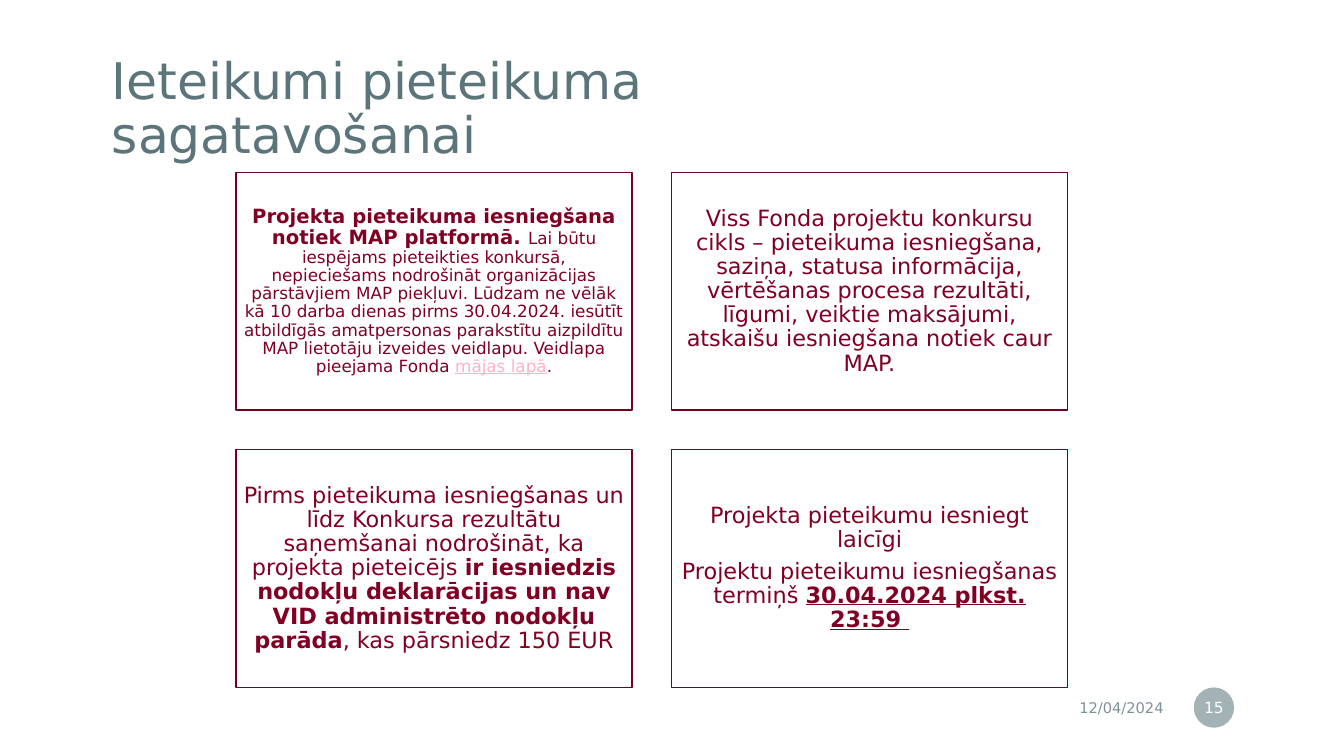
from dataclasses import dataclass

from lxml.etree import SubElement
from pptx import Presentation
from pptx.dml.color import RGBColor
from pptx.enum.shapes import MSO_SHAPE
from pptx.enum.text import MSO_ANCHOR, MSO_AUTO_SIZE, PP_ALIGN
from pptx.oxml.ns import qn
from pptx.util import Inches, Pt


@dataclass(frozen=True)
class Theme:
    font: str = "DejaVu Sans"
    title: str = "5B757A"
    muted: str = "7C9396"
    white: str = "FFFFFF"
    border: str = "740021"
    text: str = "800024"
    link: str = "FFB2C8"
    title_size: float = 36
    body_size: float = 16
    lead_size: float = 14
    detail_size: float = 12
    number_size: float = 11
    date_size: float = 10.5


THEME = Theme()
BODY = {"size": THEME.body_size, "color": THEME.text}
BOLD = {**BODY, "bold": True}
DETAIL = {**BODY, "size": THEME.detail_size}

CARD_LEFT, CARD_TOP = 2.34, 1.71
CARD_WIDTH, CARD_HEIGHT, CARD_GAP = 3.93, 2.36, 0.39

# Each card is a list of paragraphs, each paragraph a list of (text, format) runs.
CARDS = [
    [[
        ("Projekta pieteikuma iesniegšana notiek MAP platformā. ",
         {**BOLD, "size": THEME.lead_size}),
        ("Lai būtu iespējams pieteikties konkursā, nepieciešams nodrošināt "
         "organizācijas pārstāvjiem MAP piekļuvi. Lūdzam ne vēlāk kā 10 darba "
         "dienas pirms 30.04.2024. iesūtīt atbildīgās amatpersonas parakstītu "
         "aizpildītu MAP lietotāju izveides veidlapu. Veidlapa pieejama Fonda ",
         DETAIL),
        ("mājas lapā", {**DETAIL, "color": THEME.link, "underline": True}),
        (".", DETAIL),
    ]],
    [[
        ("Viss Fonda projektu konkursu cikls – pieteikuma iesniegšana, saziņa, "
         "statusa informācija, vērtēšanas procesa rezultāti, līgumi, veiktie "
         "maksājumi, atskaišu iesniegšana notiek caur MAP.", BODY),
    ]],
    [[
        ("Pirms pieteikuma iesniegšanas un līdz Konkursa rezultātu saņemšanai "
         "nodrošināt, ka projekta pieteicējs ", BODY),
        ("ir iesniedzis nodokļu deklarācijas un nav VID administrēto nodokļu "
         "parāda", BOLD),
        (", kas pārsniedz 150 EUR", BODY),
    ]],
    [
        [("Projekta pieteikumu iesniegt laicīgi", BODY)],
        [("Projektu pieteikumu iesniegšanas termiņš ", BODY),
         ("30.04.2024 plkst. 23:59 ", {**BOLD, "underline": True})],
    ],
]


def set_attributes(target, values):
    for name, value in values.items():
        setattr(target, name, value)


def write_text(shape, paragraphs, margins, paragraph_format):
    """Fill a shape with formatted runs; margins are horizontal, vertical inches."""
    horizontal, vertical = (Inches(margin) for margin in margins)
    frame = shape.text_frame
    set_attributes(frame, {
        "word_wrap": True,
        "auto_size": MSO_AUTO_SIZE.NONE,
        "vertical_anchor": MSO_ANCHOR.MIDDLE,
        "margin_left": horizontal, "margin_right": horizontal,
        "margin_top": vertical, "margin_bottom": vertical,
    })
    for index, runs in enumerate(paragraphs):
        paragraph = frame.add_paragraph() if index else frame.paragraphs[0]
        set_attributes(paragraph, paragraph_format)
        for text, style in runs:
            run = paragraph.add_run()
            run.text = text
            set_attributes(run.font, {
                "name": THEME.font,
                "size": Pt(style["size"]),
                "bold": style.get("bold", False),
                "underline": style.get("underline", False),
            })
            run.font.color.rgb = RGBColor.from_string(style["color"])


def add_filled_shape(slide, kind, box, color):
    shape = slide.shapes.add_shape(kind, *map(Inches, box))
    shape.shadow.inherit = False
    shape.fill.solid()
    shape.fill.fore_color.rgb = RGBColor.from_string(color)
    return shape


def add_title(slide, text):
    title = slide.shapes.title
    set_attributes(title, {"left": Inches(0.91), "top": Inches(0.48),
                           "width": Inches(8.73), "height": Inches(1.23)})
    style = {"size": THEME.title_size, "color": THEME.title}
    write_text(title, [[(text, style)]], (0.2, 0.2),
               {"alignment": PP_ALIGN.LEFT, "line_spacing": 0.9})


def add_card(slide, index, paragraphs):
    row, column = divmod(index, 2)
    box = (CARD_LEFT + column * (CARD_WIDTH + CARD_GAP),
           CARD_TOP + row * (CARD_HEIGHT + CARD_GAP), CARD_WIDTH, CARD_HEIGHT)
    card = add_filled_shape(slide, MSO_SHAPE.RECTANGLE, box, THEME.white)
    card.line.color.rgb = RGBColor.from_string(THEME.border)
    card.line.width = Pt(1)
    write_text(card, paragraphs, (0.07, 0.07),
               {"alignment": PP_ALIGN.CENTER, "line_spacing": 0.9,
                "space_after": Pt(5.6)})


def add_date(slide, text):
    box = slide.shapes.add_textbox(*map(Inches, (8.63, 6.84, 3.01, 0.35)))
    style = {"size": THEME.date_size, "color": THEME.muted}
    write_text(box, [[(text, style)]], (0.1, 0.05), {"alignment": PP_ALIGN.RIGHT})


def add_page_number(slide, text):
    badge = add_filled_shape(slide, MSO_SHAPE.OVAL, (11.84, 6.82, 0.4, 0.4),
                             THEME.muted)
    badge.line.fill.background()
    color = badge.fill._xPr.find(qn("a:solidFill"))[0]
    SubElement(color, qn("a:alpha"), val="70000")
    style = {"size": THEME.number_size, "color": THEME.white}
    write_text(badge, [[(text, style)]], (0.02, 0.05),
               {"alignment": PP_ALIGN.CENTER})


def main():
    presentation = Presentation()
    presentation.slide_width = Inches(13.33)
    presentation.slide_height = Inches(7.5)
    slide = presentation.slides.add_slide(presentation.slide_layouts[5])
    add_title(slide, "Ieteikumi pieteikuma sagatavošanai")
    add_date(slide, "12/04/2024")
    add_page_number(slide, "15")
    for index, paragraphs in enumerate(CARDS):
        add_card(slide, index, paragraphs)
    presentation.save("out.pptx")


if __name__ == "__main__":
    main()
